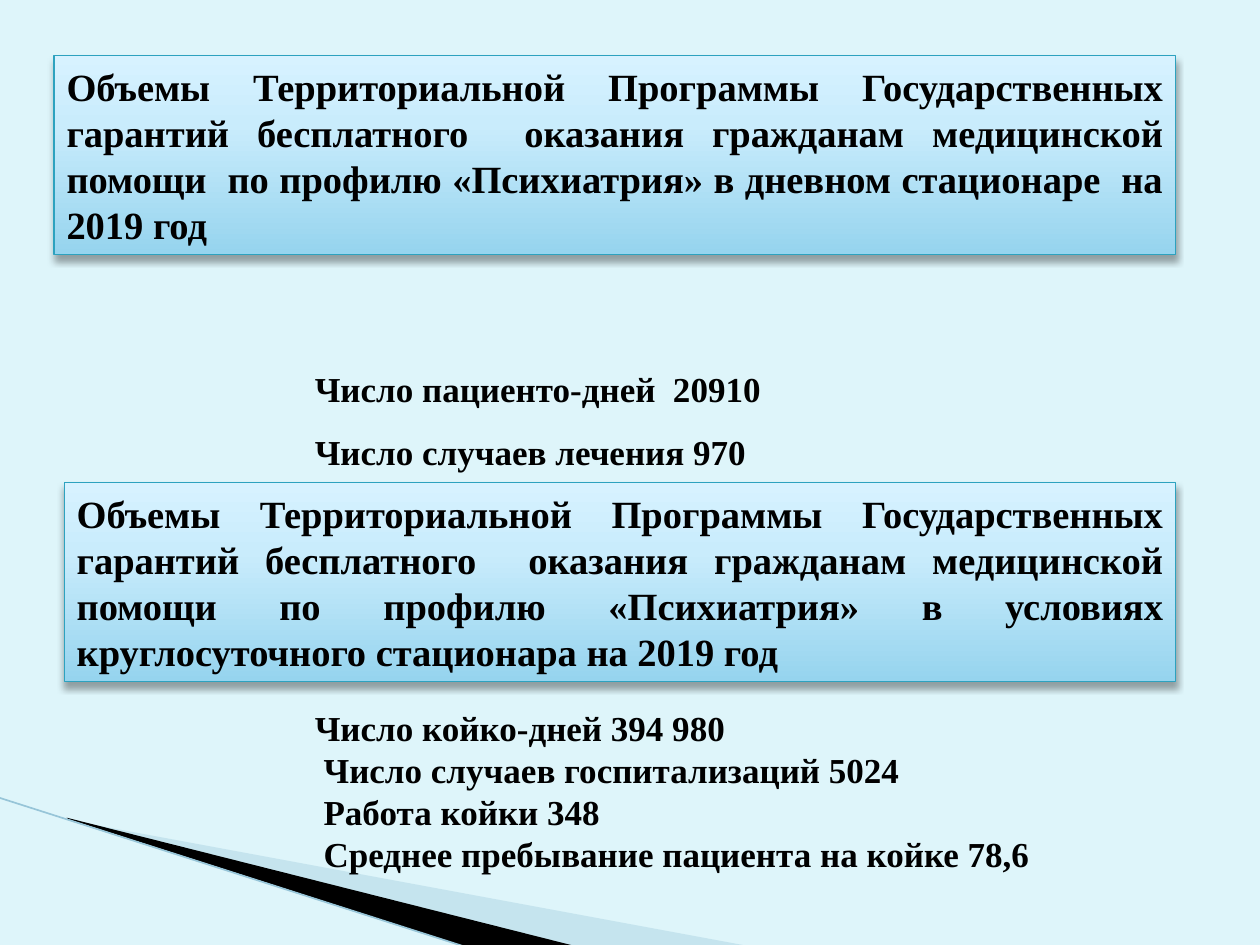
"""Build the slide on 2019 volumes of psychiatric day and inpatient care."""
from lxml import etree
from pptx import Presentation, util as u
from pptx.dml.color import RGBColor
from pptx.enum import shapes, text
from pptx.oxml import parse_xml
from pptx.oxml.ns import qn, nsdecls

Inches = u.Inches


def paint(fill, color):
    fill.solid()
    fill.fore_color.rgb = RGBColor.from_string(color)


def write(shape, lines, size, align, space):
    frame = shape.text_frame
    frame.word_wrap = True
    frame.text = "\n".join(lines)
    for para in frame.paragraphs:
        para.alignment = align
        para.line_spacing = space
        font = para.runs[0].font
        font.name, font.size, font.bold = "Times New Roman", u.Pt(size), True
        paint(font.fill, "000000")


prs = Presentation()
prs.slide_width, prs.slide_height = Inches(10), Inches(7.5)
slide = prs.slides.add_slide(prs.slide_layouts[6])
paint(slide.background.fill, "DEF5FA")
items = slide.shapes

wedges = [
    ("A0CBDC", 40, [(0.55, 6.51), (5.95, 7.51), (4.56, 7.51), (0.55, 6.5)]),
    ("000000", 100, [(0.53, 6.49), (4.57, 7.51), (3.72, 7.52), (0.54, 6.5)]),
]
for color, alpha, points in wedges:
    first, *rest = [(Inches(x), Inches(y)) for x, y in points]
    pen = items.build_freeform(*first)
    pen.add_line_segments(rest, close=True)
    wedge = pen.convert_to_shape()
    wedge.shadow.inherit = False
    wedge.line.fill.background()
    paint(wedge.fill, color)
    if alpha < 100:
        tint = wedge._element.spPr.find(".//" + qn("a:srgbClr"))
        etree.SubElement(tint, qn("a:alpha"), val=str(alpha * 1000))

edge = items.add_connector(shapes.MSO_CONNECTOR.STRAIGHT, Inches(-0.01),
                           Inches(6.33), Inches(3.71), Inches(7.52))
paint(edge.line.fill, "97C5D8")
edge.line.width = u.Pt(0.95)
etree.SubElement(edge._element.spPr, qn("a:effectLst"))

lead = "Объемы Территориальной Программы Государственных гарантий бесплатного  оказания гражданам медицинской помощи "
panels = [
    (0.43, 0.44, 8.9, lead + " по профилю «Психиатрия» в дневном стационаре  на 2019 год"),
    (0.51, 3.83, 8.82, lead + "по профилю «Психиатрия» в условиях круглосуточного стационара на 2019 год"),
]
stops = [(0, "96D4EE"), (65, "C9ECFC"), (100, "D7F2FF")]
for left, top, width, words in panels:
    panel = items.add_shape(shapes.MSO_SHAPE.RECTANGLE, Inches(left),
                            Inches(top), Inches(width), Inches(1.58))
    paint(panel.line.fill, "2DA2BF")
    panel.line.width = u.Pt(0.75)
    panel.fill.gradient()
    panel.fill.gradient_angle = 90
    props = panel._element.spPr
    ramp = props.find(".//" + qn("a:gsLst"))
    ramp.clear()
    for place, color in stops:
        stop = etree.SubElement(ramp, qn("a:gs"), pos=str(place * 1000))
        etree.SubElement(stop, qn("a:srgbClr"), val=color)
    panel.shadow.inherit = False
    props.find(qn("a:effectLst")).append(parse_xml(
        f'<a:outerShdw {nsdecls("a")} blurRad="50800" dist="38100" dir="5400000" rotWithShape="0">'
        '<a:srgbClr val="000000"><a:alpha val="35000"/></a:srgbClr></a:outerShdw>'))
    write(panel, [words], 22, text.PP_ALIGN.JUSTIFY, 1)

notes = [
    (2.7, 4.76, 1.05, 1.5, ["Число пациенто-дней  20910", "Число случаев лечения 970"]),
    (5.56, 6.46, 1.45, 1, ["Число койко-дней 394 980", "Число случаев госпитализаций 5024",
                           "Работа койки 348", "Среднее пребывание пациента на койке 78,6"]),
]
for top, width, height, space, lines in notes:
    note = items.add_textbox(Inches(2.4), Inches(top), Inches(width), Inches(height))
    write(note, lines, 20, text.PP_ALIGN.LEFT, space)

for para in note.text_frame.paragraphs[1:]:
    para._p.get_or_add_pPr().set("marL", str(Inches(0.07)))

prs.save("out.pptx")
